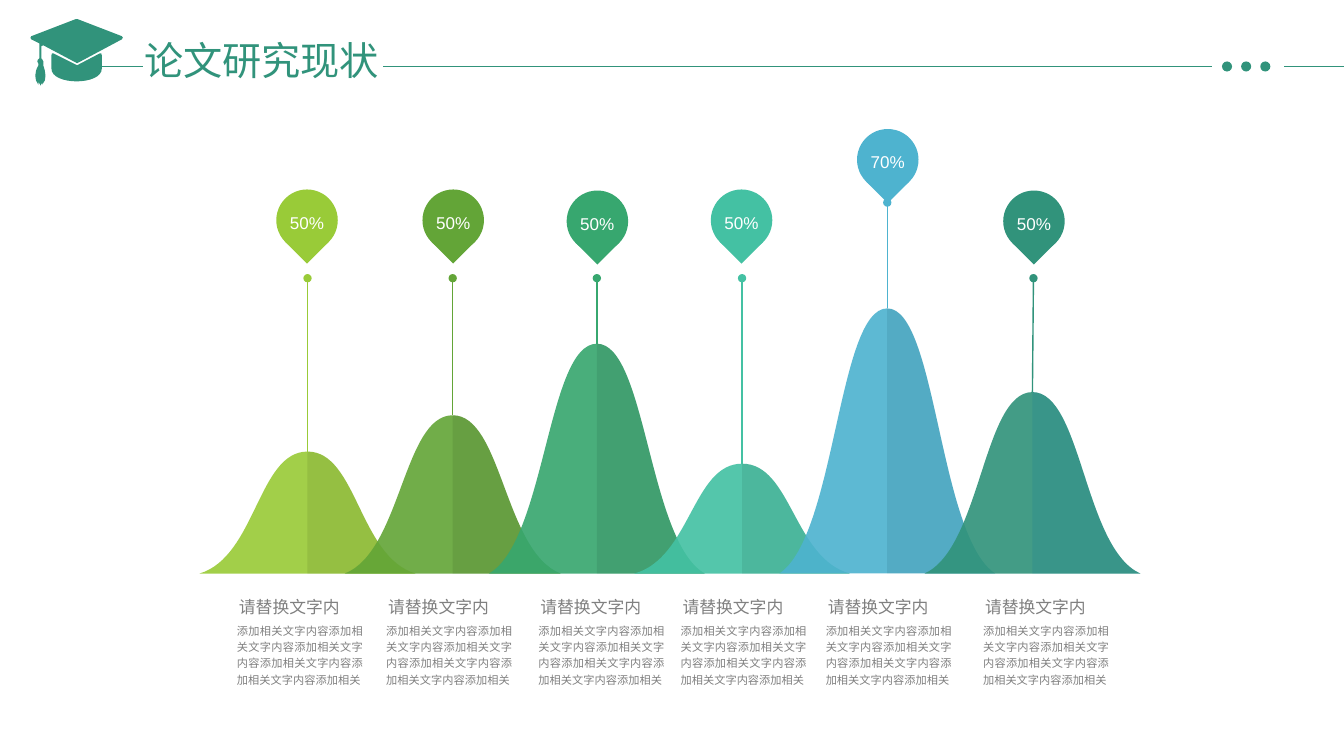
import lxml.etree
import pptx
import pptx.dml.color
import pptx.enum.shapes
import pptx.enum.text
import pptx.oxml.ns
import pptx.util

SCALE = 9144
BASE = 569
HALF = 107
TEAL = "31937B"
GREY = "808080"
SANS = "Noto Sans CJK SC"
HEAD = "请替换文字内"
BODY = "添加相关文字内容" * 5 + "添加相关"
OVAL = pptx.enum.shapes.MSO_SHAPE.OVAL
ALIGN = pptx.enum.text.PP_ALIGN
FIT = pptx.enum.text.MSO_AUTO_SIZE.SHAPE_TO_FIT_TEXT

PEAKS = [
    (305, 448, "99CB38", "4D671B", 274, 188, 276, "50%", 235),
    (449, 412, "63A537", "31521C", 419, 188, 276, "50%", 383),
    (592, 341, "37A76F", "1C5438", 562, 189, 276, "50%", 534),
    (736, 460, "44C1A3", "206252", 705, 188, 276, "50%", 675),
    (880, 306, "4EB3CF", "1E5E70", 850, 128, 201, "70%", 819),
    (1024, 389, TEAL, "056EA0", 995, 189, 276, "50%", 975),
]


def px(num):
    return round(num * SCALE)


def tint(hue):
    return pptx.dml.color.RGBColor.from_string(hue)


def child(node, tag, **attrs):
    return lxml.etree.SubElement(node, pptx.oxml.ns.qn(tag), **attrs)


def paint(shape, hue, alpha=100):
    shape.shadow.inherit = False
    shape.line.fill.background()
    shape.fill.solid()
    shape.fill.fore_color.rgb = tint(hue)
    if alpha < 100:
        tag = pptx.oxml.ns.qn("a:srgbClr")
        color = next(shape._element.spPr.iter(tag))
        child(color, "a:alpha", val=str(alpha * 1000))


def pairs(step):
    return [(px(x), px(y)) for x, y in zip(step[::2], step[1::2])]


def curve(knots):
    arc = child(knots[0].getparent(), "a:cubicBezTo")
    knots[0].addprevious(arc)
    for knot in knots:
        arc.append(knot[0])
        knot.getparent().remove(knot)


def outline(shapes, loops, hue, alpha=100):
    build = shapes.build_freeform(*pairs(loops[0][0])[0], scale=1)
    for loop in loops:
        start, *points = [spot for step in loop for spot in pairs(step)]
        if loop is not loops[0]:
            build.move_to(*start)
        build.add_line_segments(points, close=True)
    shape = build.convert_to_shape()
    tag = pptx.oxml.ns.qn("a:lnTo")
    knots = iter(list(shape._element.iter(tag)))
    for loop in loops:
        for step in loop[1:]:
            group = [next(knots) for _ in pairs(step)]
            if len(group) == 3:
                curve(group)
    paint(shape, hue, alpha)


def disc(shapes, left, top, size, hue):
    shape = shapes.add_shape(OVAL, px(left), px(top), px(size), px(size))
    paint(shape, hue)
    return shape


def rule(shapes, start, end, hue, width):
    kind = pptx.enum.shapes.MSO_CONNECTOR.STRAIGHT
    line = shapes.add_connector(kind, *map(px, start + end))
    line.line.color.rgb = tint(hue)
    line.line.width = pptx.util.Pt(width)
    child(line._element.spPr, "a:effectLst")
    return line


def write(frame, text, size, hue, face="Arial", space=1.2, align=ALIGN.LEFT):
    frame.text = text
    para = frame.paragraphs[0]
    para.alignment = align
    para.line_spacing = space
    font = para.runs[0].font
    font.name = face
    font.size = pptx.util.Pt(size)
    font.color.rgb = tint(hue)
    child(font._element, "a:ea", typeface=face)


def trim(frame):
    frame.margin_left = frame.margin_right = 0
    frame.margin_top = frame.margin_bottom = 0


def label(shapes, box, text, size, wrap, align):
    frame = shapes.add_textbox(*map(px, box)).text_frame
    trim(frame)
    frame.word_wrap = wrap
    frame.auto_size = FIT
    write(frame, text, size, GREY, align=align)


def hill(shapes, mid, top, hue, shade):
    pull = BASE - 0.14 * (BASE - top)
    fall = (mid - 49, top, mid - 51, pull, mid - HALF, BASE)
    rise = (mid + 51, pull, mid + 49, top, mid, top)
    foot, edge = (mid, BASE), (mid + HALF, BASE)
    outline(shapes, [[(mid, top), fall, foot, edge, rise]], hue, 91)
    outline(shapes, [[edge, rise, foot]], shade, 15)


def pin(shapes, left, top, hue, share):
    frame = disc(shapes, left, top, 61, hue).text_frame
    trim(frame)
    frame.word_wrap = True
    frame.vertical_anchor = pptx.enum.text.MSO_ANCHOR.MIDDLE
    write(frame, share, 12.2, "FFFFFF", align=ALIGN.CENTER)
    x, y = left + 9, top + 52
    outline(shapes, [[(x, y), (x + 43, y), (x + 21.5, y + 21.5)]], hue)


def peak(slide, mid, top, hue, shade, left, high, start, share):
    shapes = slide.shapes.add_group_shape().shapes
    hill(shapes, mid, top, hue, shade)
    pin(shapes, left, high, hue, share)
    stem = rule(shapes, (max(mid, left + 30), start), (mid, top), hue, 1)
    child(stem.line._get_or_add_ln(), "a:headEnd", type="oval")


def note(slide, left):
    shapes = slide.shapes.add_group_shape().shapes
    label(shapes, (left + 2, 588, 101, 24), HEAD, 12, False, ALIGN.LEFT)
    label(shapes, (left, 617, 125, 65), BODY, 8, True, ALIGN.JUSTIFY)


def cap(shapes):
    bowl = [(51, 55), (51, 68), (51, 85, 101, 85, 101, 68),
            (101, 55), (101, 53, 100, 52, 99, 53), (78, 64),
            (77, 65, 76, 65, 75, 64), (53, 53), (52, 52, 51, 53, 51, 55)]
    board = [(41, 46), (41, 58), (42, 59), (43, 61), (43, 65),
             (45, 71, 47, 79, 42, 84), (42, 82), (40, 85), (39, 81),
             (39, 83), (38, 81), (38, 84),
             (34, 79, 34, 72, 38, 65), (38, 63), (37, 61),
             (37, 60, 38, 58, 39, 58), (39, 43), (31, 39),
             (30, 39, 30, 36, 31, 36), (75, 19), (77, 19),
             (121, 36), (122, 36, 122, 39, 121, 39), (78, 62),
             (77, 63, 76, 63, 75, 62), (43, 45), (42, 45, 41, 46, 41, 46)]
    outline(shapes, [bowl, board], TEAL)


def title(slide):
    shape = slide.shapes.title
    shape.left, shape.top, shape.width, shape.height = map(
        px, (133, 17, 256, 66))
    frame = shape.text_frame
    frame.word_wrap = False
    frame.auto_size = FIT
    frame.vertical_anchor = pptx.enum.text.MSO_ANCHOR.TOP
    write(frame, "论文研究现状", 28, TEAL, SANS, 1.3)


def band(slide):
    shapes = slide.shapes.add_group_shape().shapes
    for start, end in ((380, 1202), (55, 142), (1274, 1333)):
        rule(shapes, (start, 66), (end, 66), TEAL, 0.5)
    for left in (1212, 1231, 1250):
        disc(shapes, left, 61, 10, TEAL)


def main():
    deck = pptx.Presentation()
    deck.slide_width, deck.slide_height = px(1333), px(750)
    slide = deck.slides.add_slide(deck.slide_layouts[5])
    for *facts, left in PEAKS:
        peak(slide, *facts)
    for row in PEAKS:
        note(slide, row[-1])
    cap(slide.shapes)
    title(slide)
    band(slide)
    deck.save("out.pptx")


if __name__ == "__main__":
    main()
